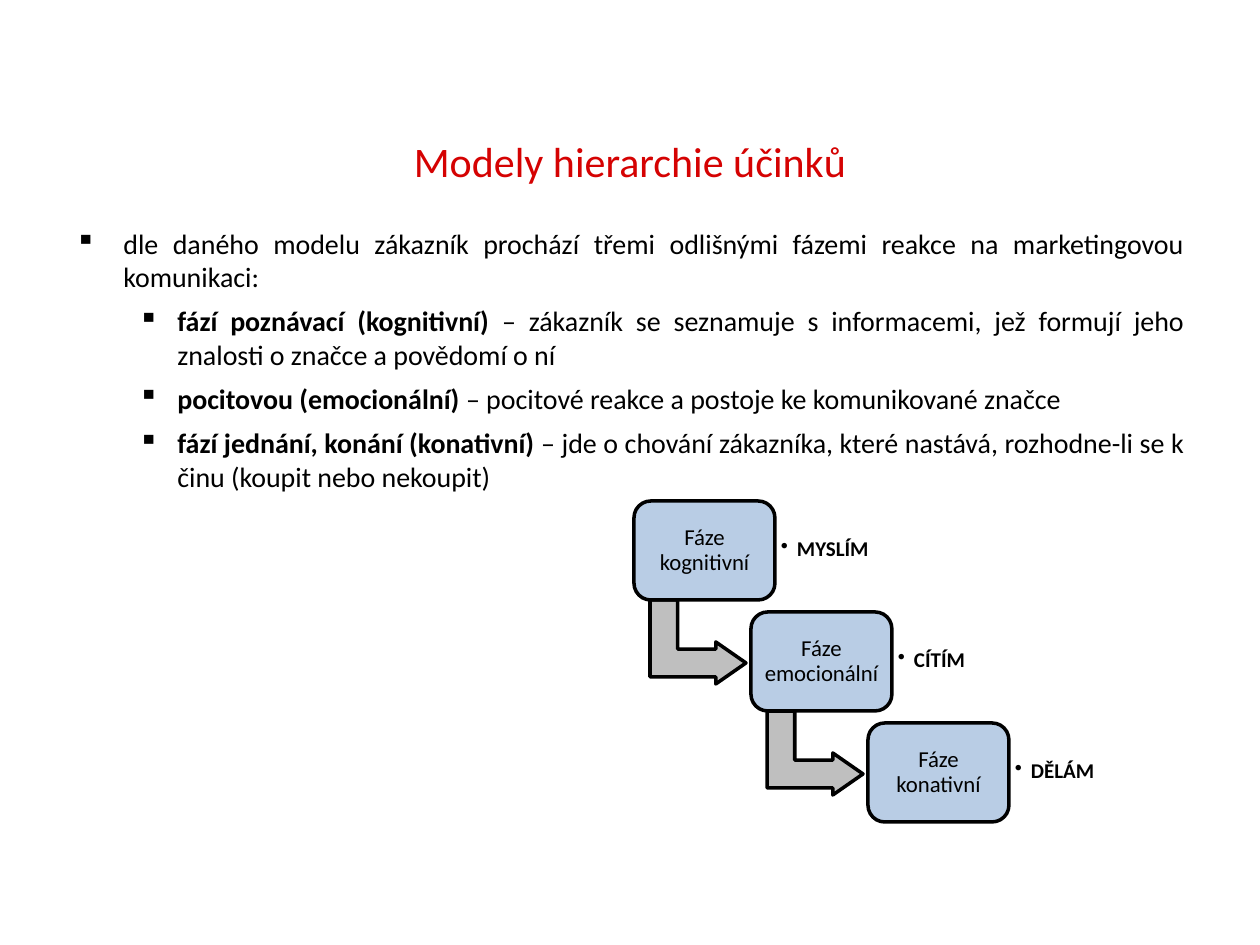
import pptx
import pptx.dml.color
import pptx.enum.shapes
import pptx.enum.text
import pptx.oxml.ns
import pptx.util
from lxml import etree

PX_PER_INCH = 126
ALIGN = pptx.enum.text.PP_ALIGN
MIDDLE = pptx.enum.text.MSO_ANCHOR.MIDDLE
SHAPE = pptx.enum.shapes.MSO_SHAPE


def px(length):
    return pptx.util.Emu(round(length * pptx.util.Inches(1) / PX_PER_INCH))


def rgb(code):
    return pptx.dml.color.RGBColor.from_string(code)


class SlideWriter:
    font = "Calibri"
    ink = "000000"
    title_color = "D50202"
    box_color = "B9CDE5"
    arrow_color = "BFBFBF"

    def __init__(self, slide):
        self.slide = slide

    def style(self, paragraph, size, align, color=None, bold=None):
        paragraph.alignment = align
        paragraph.font.name = self.font
        paragraph.font.size = pptx.util.Pt(size)
        paragraph.font.color.rgb = rgb(color or self.ink)
        paragraph.font.bold = bold

    def bullet(self, paragraph, char, indent, hanging):
        properties = paragraph._p.get_or_add_pPr()
        properties.set("marL", str(px(indent)))
        properties.set("indent", str(-px(hanging)))
        mark = etree.SubElement(properties, pptx.oxml.ns.qn("a:buChar"))
        mark.set("char", char)

    def inset(self, frame, margin):
        frame.margin_left = frame.margin_right = px(margin)
        frame.margin_top = frame.margin_bottom = px(margin)

    def title(self, text, left, top, width, height):
        title = self.slide.shapes.title
        title.left, title.top = px(left), px(top)
        title.width, title.height = px(width), px(height)
        title.text_frame.text = text
        title.text_frame.vertical_anchor = MIDDLE
        self.style(title.text_frame.paragraphs[0], 24, ALIGN.CENTER, self.title_color)

    def text_frame(self, left, top, width, height):
        frame = self.slide.shapes.add_textbox(
            px(left), px(top), px(width), px(height)).text_frame
        frame.word_wrap = True
        return frame

    def bullet_list(self, items, left, top, width, height):
        """Items are (level, bold lead, plain text)."""
        frame = self.text_frame(left, top, width, height)
        for index, (level, lead, text) in enumerate(items):
            paragraph = frame.add_paragraph() if index else frame.paragraphs[0]
            paragraph.level = level
            paragraph.space_after = pptx.util.Pt(6)
            self.bullet(paragraph, "▪", *((102, 39) if level else (48, 48)))
            self.style(paragraph, 16, ALIGN.JUSTIFY)
            if lead:
                run = paragraph.add_run()
                run.text = lead
                run.font.bold = True
            paragraph.add_run().text = text

    def outlined(self, kind, fill, adjustments, left, top, width, height):
        shape = self.slide.shapes.add_shape(
            kind, px(left), px(top), px(width), px(height))
        shape.shadow.inherit = False
        shape.fill.solid()
        shape.fill.fore_color.rgb = rgb(fill)
        shape.line.color.rgb = rgb(self.ink)
        shape.line.width = pptx.util.Pt(2)
        for index, value in enumerate(adjustments):
            shape.adjustments[index] = value
        return shape

    def arrow(self, left, top, width, height):
        arrow = self.outlined(SHAPE.BENT_UP_ARROW, self.arrow_color,
                              (0.33, 0.25, 0.36), left, top, width, height)
        arrow.rotation = 90

    def phase(self, text, left, top, width, height):
        box = self.outlined(SHAPE.ROUNDED_RECTANGLE, self.box_color, (0.17,),
                            left, top, width, height)
        frame = box.text_frame
        frame.word_wrap = True
        frame.vertical_anchor = MIDDLE
        self.inset(frame, 6)
        frame.text = text
        frame.paragraphs[0].line_spacing = 0.9
        self.style(frame.paragraphs[0], 13, ALIGN.CENTER)

    def reaction(self, text, left, top, width, height):
        frame = self.text_frame(left, top, width, height)
        frame.vertical_anchor = MIDDLE
        self.inset(frame, 6)
        frame.text = text
        paragraph = frame.paragraphs[0]
        paragraph.line_spacing = 0.9
        self.bullet(paragraph, "•", 16, 16)
        self.style(paragraph, 12, ALIGN.LEFT, bold=True)


def main():
    deck = pptx.Presentation()
    deck.slide_width, deck.slide_height = px(1260), px(945)
    writer = SlideWriter(deck.slides.add_slide(deck.slide_layouts[5]))

    writer.title("Modely hierarchie účinků", 63, 110, 1134, 101)
    writer.bullet_list([
        (0, "", "dle daného modelu zákazník prochází třemi odlišnými fázemi "
                "reakce na marketingovou komunikaci:"),
        (1, "fází poznávací (kognitivní) ",
         "– zákazník se seznamuje s informacemi, jež formují jeho znalosti "
         "o značce a povědomí o ní"),
        (1, "pocitovou (emocionální) ",
         "– pocitové reakce a postoje ke komunikované značce"),
        (1, "fází jednání, konání (konativní) ",
         "– jde o chování zákazníka, které nastává, rozhodne-li se k činu "
         "(koupit nebo nekoupit)"),
    ], 63, 220, 1134, 624)

    phases = [("Fáze kognitivní", "MYSLÍM"),
              ("Fáze emocionální", "CÍTÍM"),
              ("Fáze konativní", "DĚLÁM")]
    for step, (phase, reaction) in enumerate(phases):
        left, top = 634 + 117 * step, 501 + 111 * step
        if step < len(phases) - 1:
            writer.arrow(left + 22, top + 93, 84, 96)
        writer.phase(phase, left, top, 141, 99)
        writer.reaction(reaction, left + 141, top + 9, 102, 79)

    deck.save("out.pptx")


if __name__ == "__main__":
    main()
